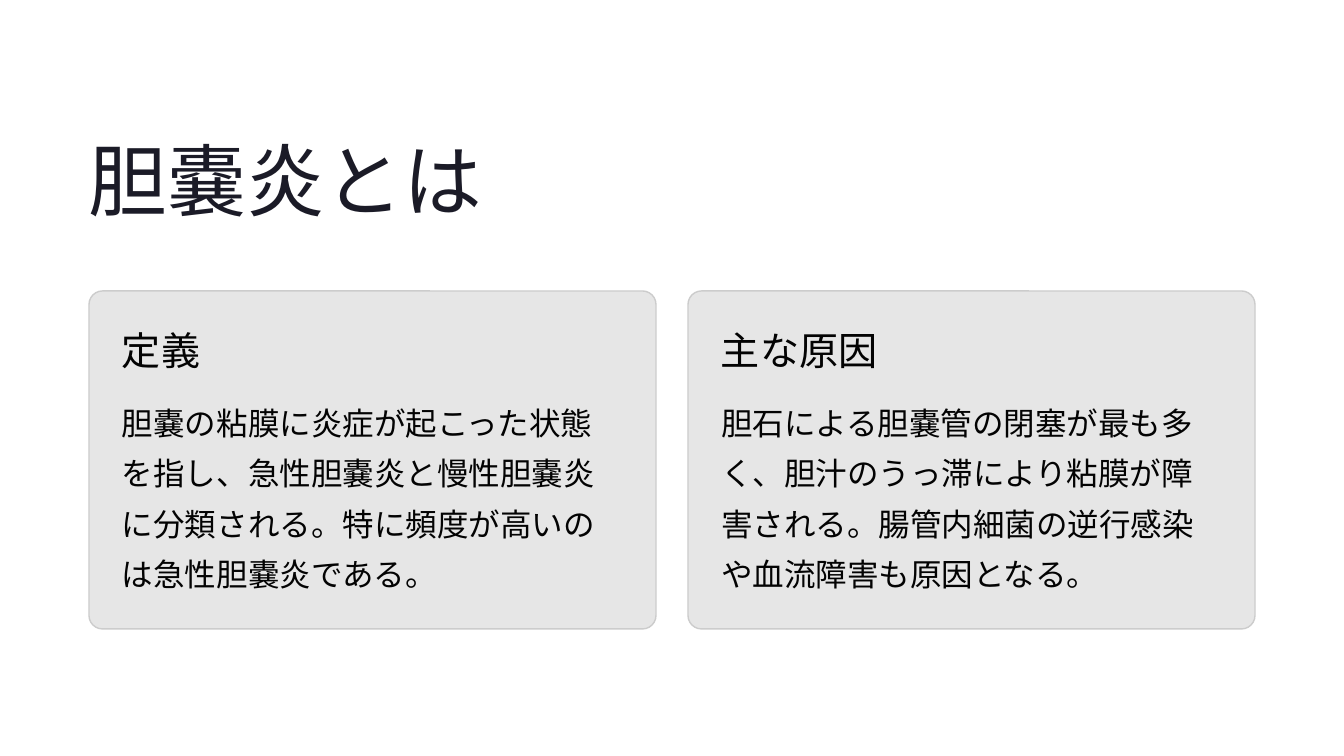
import pptx
import pptx.dml.color
import pptx.enum.lang
import pptx.enum.shapes
import pptx.enum.text
import pptx.oxml.ns
import pptx.util
import lxml.etree

PX_PER_INCH = 84
TITLE_INK = pptx.dml.color.RGBColor(0x1B, 0x1B, 0x27)
CARD_INK = pptx.dml.color.RGBColor(0x03, 0x03, 0x03)
CARD_FILL = pptx.dml.color.RGBColor(0xE6, 0xE6, 0xE6)
CARD_BORDER = pptx.dml.color.RGBColor(0xCC, 0xCC, 0xCC)
HEADING_FONT = "Inter"
BODY_FONT = "Karla"
CARD_PITCH = 599
CARDS = [
    ("定義", "胆嚢の粘膜に炎症が起こった状態を指し、急性胆嚢炎と慢性胆嚢炎に分類される。特に頻度が高いのは急性胆嚢炎である。"),
    ("主な原因", "胆石による胆嚢管の閉塞が最も多く、胆汁のうっ滞により粘膜が障害される。腸管内細菌の逆行感染や血流障害も原因となる。"),
]


def px(length):
    """Turn pixels into EMU."""
    return pptx.util.Emu(round(length * 914400 / PX_PER_INCH))


def write(frame, words, font, size, leading, color, wrap):
    """Fill a text frame with one left-aligned paragraph without insets."""
    frame.margin_left = frame.margin_right = 0
    frame.margin_top = frame.margin_bottom = 0
    frame.auto_size = pptx.enum.text.MSO_AUTO_SIZE.NONE
    frame.vertical_anchor = pptx.enum.text.MSO_ANCHOR.TOP
    frame.word_wrap = wrap
    paragraph = frame.paragraphs[0]
    paragraph.alignment = pptx.enum.text.PP_ALIGN.LEFT
    paragraph.line_spacing = pptx.util.Pt(leading)
    run = paragraph.add_run()
    run.text = words
    run.font.name = font
    run.font.size = pptx.util.Pt(size)
    run.font.color.rgb = color
    run.font.language_id = pptx.enum.lang.MSO_LANGUAGE_ID.JAPANESE
    east_asian = lxml.etree.SubElement(run.font._element, pptx.oxml.ns.qn("a:ea"))
    east_asian.set("typeface", font)


def place_title(slide, left, top, width, height):
    """Move and format the title placeholder."""
    title = slide.shapes.title
    title.left, title.top = px(left), px(top)
    title.width, title.height = px(width), px(height)
    write(title.text_frame, "胆嚢炎とは", HEADING_FONT, 67.5, 84.5, TITLE_INK, False)


def add_card(slide, left, top, width, height, heading, body):
    """Draw a rounded card with a heading above its body text."""
    padding = 33
    card = slide.shapes.add_shape(
        pptx.enum.shapes.MSO_SHAPE.ROUNDED_RECTANGLE,
        px(left), px(top), px(width), px(height))
    card.adjustments[0] = 0.04
    card.shadow.inherit = False
    card.fill.solid()
    card.fill.fore_color.rgb = CARD_FILL
    card.line.color.rgb = CARD_BORDER
    card.line.width = pptx.util.Pt(1.2)
    heading_box = slide.shapes.add_textbox(
        px(left + padding), px(top + padding), px(396), px(50))
    write(heading_box.text_frame, heading, HEADING_FONT, 33.5, 42, CARD_INK, False)
    body_box = slide.shapes.add_textbox(
        px(left + padding), px(top + 101), px(width - 2 * padding), px(202))
    write(body_box.text_frame, body, BODY_FONT, 27, 43, CARD_INK, True)


def main():
    """Build the slide and save it."""
    deck = pptx.Presentation()
    deck.slide_width, deck.slide_height = px(1344), px(756)
    slide = deck.slides.add_slide(deck.slide_layouts.get_by_name("Title Only"))
    place_title(slide, 89, 128, 792, 99)
    for column, (heading, body) in enumerate(CARDS):
        add_card(slide, 89 + column * CARD_PITCH, 291, 567, 338, heading, body)
    deck.save("out.pptx")


if __name__ == "__main__":
    main()
